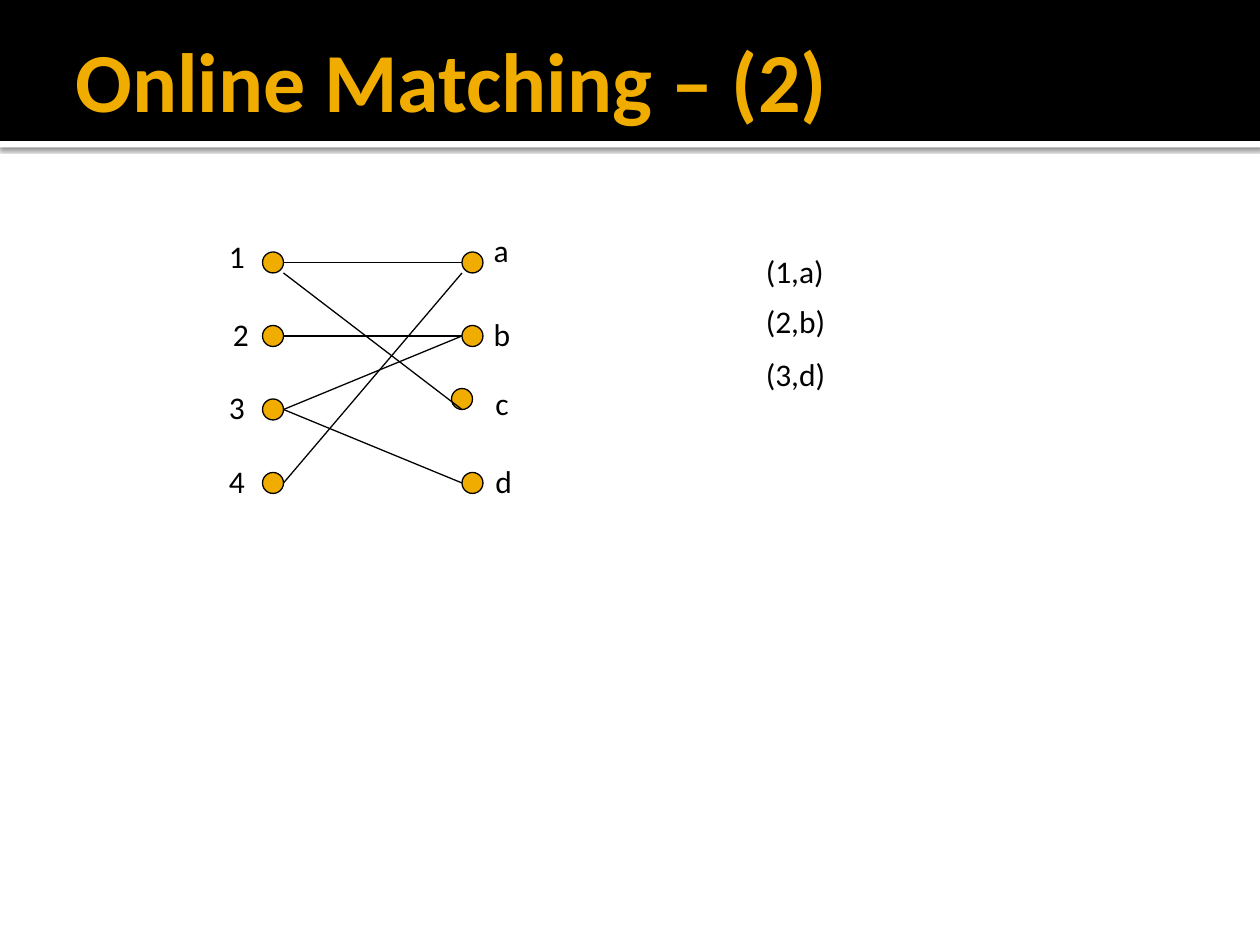
from lxml import etree
from pptx import Presentation
from pptx.dml.color import RGBColor
from pptx.enum.shapes import MSO_CONNECTOR, MSO_SHAPE
from pptx.enum.text import MSO_ANCHOR, MSO_AUTO_SIZE
from pptx.oxml import parse_xml
from pptx.oxml.ns import nsdecls, qn
from pptx.util import Pt

COLORS = {"black": "000000", "white": "FFFFFF", "gold": "F0AD00"}
FONT = "Calibri"
SLIDE_WIDTH, SLIDE_HEIGHT = 720, 540
BANNER_HEIGHT, STRIP_HEIGHT = 80.5, 3.75
TITLE = "Online Matching – (2)"

NODE_SIZE, ROW_TOP, ROW_STEP = 12, 144, 42
LEFT_X, RIGHT_X = 150, 264
LABEL_HEIGHT = 28.8

# label, label left, label top
LEFT_NODES = [
    ("1", 123.75, 132),
    ("2", 126, 176.4),
    ("3", 123.75, 218.4),
    ("4", 123.75, 260.4),
]
# label, label left, label top, label width, node shift,
# edges as (left row, start offset, end row, end offset) from the node tops
RIGHT_NODES = [
    ("a", 275, 128.4, 25.2, 0, [(0, 6, 0, 6), (3, 6, 0, 12)]),
    ("b", 275, 176.4, 26, 0, [(1, 6, 1, 6), (2, 6, 1, 6)]),
    ("c", 276, 216, 23.8, -6, [(0, 12, 2, 6)]),
    ("d", 276, 260.4, 26, 0, [(2, 6, 3, 6)]),
]
MATCHES = [("(1,a)", 140.4), ("(2,b)", 169.2), ("(3,d)", 199.2)]
MATCH_X, MATCH_WIDTH = 430.5, 60


def rgb(name):
    return RGBColor.from_string(COLORS[name])


def row_y(row):
    return ROW_TOP + row * ROW_STEP


def add_filled(shapes, kind, left, top, width, height, color):
    shape = shapes.add_shape(kind, Pt(left), Pt(top), Pt(width), Pt(height))
    shape.shadow.inherit = False
    shape.fill.solid()
    shape.fill.fore_color.rgb = rgb(color)
    shape.line.fill.background()
    return shape


def add_node(shapes, left, top):
    node = add_filled(shapes, MSO_SHAPE.OVAL, left, top, NODE_SIZE, NODE_SIZE, "gold")
    node.line.color.rgb = rgb("black")
    node.line.width = Pt(0.75)


def add_edge(shapes, start_y, end_y):
    edge = shapes.add_connector(
        MSO_CONNECTOR.STRAIGHT,
        Pt(LEFT_X + NODE_SIZE), Pt(start_y), Pt(RIGHT_X), Pt(end_y),
    )
    edge.line.color.rgb = rgb("black")
    edge.line.width = Pt(0.75)
    etree.SubElement(edge._element.spPr, qn("a:effectLst"))


def add_text(shapes, text, left, top, width, height=LABEL_HEIGHT,
             size=18, color="black", bold=False):
    box = shapes.add_textbox(Pt(left), Pt(top), Pt(width), Pt(height))
    frame = box.text_frame
    frame.text = text
    frame.word_wrap = False
    frame.auto_size = MSO_AUTO_SIZE.SHAPE_TO_FIT_TEXT
    font = frame.paragraphs[0].runs[0].font
    font.name, font.size, font.bold = FONT, Pt(size), bold
    font.color.rgb = rgb(color)
    return frame


def add_banner(shapes):
    strip = add_filled(shapes, MSO_SHAPE.RECTANGLE, 0, BANNER_HEIGHT,
                       SLIDE_WIDTH, STRIP_HEIGHT, "white")
    effects = strip._element.spPr.find(qn("a:effectLst"))
    effects.append(parse_xml(
        f'<a:outerShdw {nsdecls("a")} blurRad="{Pt(2.5)}" dist="{Pt(0.8)}" '
        f'dir="5400000" algn="tl" rotWithShape="0">'
        f'<a:srgbClr val="{COLORS["black"]}"><a:alpha val="60000"/></a:srgbClr>'
        f'</a:outerShdw>'
    ))
    add_filled(shapes, MSO_SHAPE.RECTANGLE, 0, 0, SLIDE_WIDTH, BANNER_HEIGHT, "black")
    frame = add_text(shapes, TITLE, 36, 6, 684, 78, 48, "gold", True)
    frame.auto_size = MSO_AUTO_SIZE.NONE
    frame.word_wrap = True
    frame.vertical_anchor = MSO_ANCHOR.MIDDLE
    frame.margin_right = Pt(3.6)


def add_graph(shapes):
    for row, (label, left, top) in enumerate(LEFT_NODES):
        add_node(shapes, LEFT_X, row_y(row))
        add_text(shapes, label, left, top, 26)
    for row, (label, left, top, width, shift, edges) in enumerate(RIGHT_NODES):
        group = shapes.add_group_shape().shapes
        add_node(group, RIGHT_X + shift, row_y(row) + shift)
        for start_row, start_offset, end_row, end_offset in edges:
            add_edge(group, row_y(start_row) + start_offset, row_y(end_row) + end_offset)
        add_text(group, label, left, top, width)


def main():
    presentation = Presentation()
    presentation.slide_width, presentation.slide_height = Pt(SLIDE_WIDTH), Pt(SLIDE_HEIGHT)
    slide = presentation.slides.add_slide(presentation.slide_layouts[6])
    add_banner(slide.shapes)
    add_graph(slide.shapes)
    for text, top in MATCHES:
        add_text(slide.shapes, text, MATCH_X, top, MATCH_WIDTH)
    presentation.save("out.pptx")


if __name__ == "__main__":
    main()
